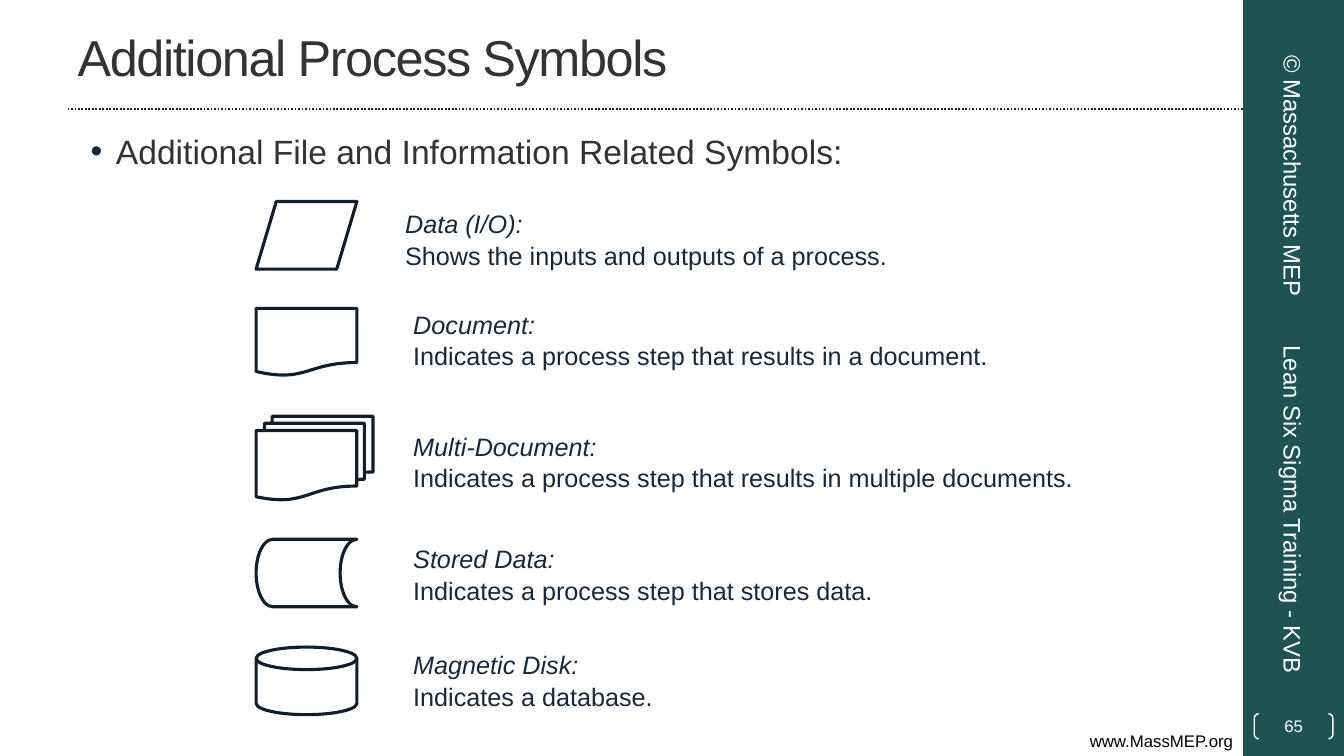
from lxml import etree
from pptx import Presentation
from pptx.dml.color import RGBColor
from pptx.enum.dml import MSO_LINE
from pptx.enum.shapes import MSO_CONNECTOR, MSO_SHAPE
from pptx.enum.text import MSO_ANCHOR, MSO_AUTO_SIZE, PP_ALIGN
from pptx.oxml.ns import qn
from pptx.util import Emu, Pt

PX = 9144  # EMU per px, at 100 px to the inch
LEFT, CENTER, RIGHT = PP_ALIGN.LEFT, PP_ALIGN.CENTER, PP_ALIGN.RIGHT
TOP, MIDDLE = MSO_ANCHOR.TOP, MSO_ANCHOR.MIDDLE
NO_FIT, GROW = MSO_AUTO_SIZE.NONE, MSO_AUTO_SIZE.SHAPE_TO_FIT_TEXT
STRAIGHT = MSO_CONNECTOR.STRAIGHT
DOTTED = MSO_LINE.ROUND_DOT

TEAL = RGBColor(0x1F, 0x52, 0x52)
NAVY = RGBColor(0x18, 0x28, 0x3B)
RULE_NAVY = RGBColor(0x17, 0x27, 0x3B)
OUTLINE = RGBColor(0x12, 0x1E, 0x2C)
CHARCOAL = RGBColor(0x33, 0x33, 0x33)
BLACK = RGBColor(0x00, 0x00, 0x00)
WHITE = RGBColor(0xFF, 0xFF, 0xFF)

SYMBOL_LEFT = 254
TEXT_RIGHT = 1092

# shape, top, width, height, text left, text top, name, meaning
SYMBOLS = [
    (MSO_SHAPE.FLOWCHART_DATA, 200, 100, 67, 392, 200,
     "Data (I/O):", "Shows the inputs and outputs of a process."),
    (MSO_SHAPE.FLOWCHART_DOCUMENT, 306, 100, 67, 400, 300,
     "Document:", "Indicates a process step that results in a document."),
    (MSO_SHAPE.FLOWCHART_MULTIDOCUMENT, 413, 116, 83, 400, 421,
     "Multi-Document:",
     "Indicates a process step that results in multiple documents."),
    (MSO_SHAPE.FLOWCHART_STORED_DATA, 535, 100, 67, 400, 533,
     "Stored Data:", "Indicates a process step that stores data."),
    (MSO_SHAPE.FLOWCHART_MAGNETIC_DISK, 642, 100, 67, 400, 638,
     "Magnetic Disk:", "Indicates a database."),
]


def px(*lengths):
    return [Emu(length * PX) for length in lengths]


class SlideBuilder:
    font = "Arial"

    def __init__(self, slide):
        self.slide = slide

    def run(self, paragraph, text, size, color, italic=False):
        run = paragraph.add_run()
        run.text = text
        run.font.name = self.font
        run.font.size = Pt(size)
        run.font.color.rgb = color
        run.font.italic = italic
        return run

    def placeholder(self, index, box, anchor):
        """Move a template placeholder and return its first paragraph."""
        shape = self.slide.placeholders[index]
        shape.left, shape.top, shape.width, shape.height = px(*box)
        frame = shape.text_frame
        frame.auto_size = NO_FIT
        frame.vertical_anchor = anchor
        paragraph = frame.paragraphs[0]
        paragraph.alignment = LEFT
        paragraph.space_before = Pt(0)
        return paragraph

    def title(self, text, box):
        paragraph = self.placeholder(0, box, MIDDLE)
        run = self.run(paragraph, text, 36, CHARCOAL)
        run.font._element.set("spc", "-100")

    def bullet(self, text, box):
        paragraph = self.placeholder(1, box, TOP)
        properties = paragraph._p.get_or_add_pPr()
        properties.set("marL", str(38 * PX))
        properties.set("indent", str(-25 * PX))
        color = etree.SubElement(properties, qn("a:buClr"))
        etree.SubElement(color, qn("a:srgbClr"), val=str(NAVY))
        etree.SubElement(properties, qn("a:buFont"), typeface=self.font)
        etree.SubElement(properties, qn("a:buChar"), char="•")
        self.run(paragraph, text, 24, CHARCOAL)

    def text(self, lines, box, size, color, align=LEFT, anchor=TOP,
             fit=NO_FIT, rotation=0, spacing=None):
        """Add a text box from (text, italic) lines, one paragraph each."""
        shape = self.slide.shapes.add_textbox(*px(*box))
        shape.rotation = rotation
        frame = shape.text_frame
        frame.word_wrap = True
        frame.auto_size = fit
        frame.vertical_anchor = anchor
        for number, (text, italic) in enumerate(lines):
            paragraph = frame.add_paragraph() if number else frame.paragraphs[0]
            paragraph.alignment = align
            paragraph.line_spacing = spacing
            self.run(paragraph, text, size, color, italic)

    def shape(self, kind, box, fill=None, line=None, weight=1):
        shape = self.slide.shapes.add_shape(kind, *px(*box))
        shape.shadow.inherit = False
        if fill is None:
            shape.fill.background()
        else:
            shape.fill.solid()
            shape.fill.fore_color.rgb = fill
        if line is None:
            shape.line.fill.background()
        else:
            shape.line.color.rgb = line
            shape.line.width = Pt(weight)
        return shape

    def dotted_rule(self, left, right, y):
        rule = self.slide.shapes.add_connector(STRAIGHT, *px(left, y, right, y))
        rule.line.color.rgb = RULE_NAVY
        rule.line.width = Pt(1.25)
        rule.line.dash_style = DOTTED
        etree.SubElement(rule._element.spPr, qn("a:effectLst"))

    def page_number(self, number, box):
        bracket = self.shape(MSO_SHAPE.DOUBLE_BRACKET, box, line=WHITE)
        bracket.adjustments[0] = 0.18
        frame = bracket.text_frame
        frame.margin_left = frame.margin_right = 0
        frame.margin_top = frame.margin_bottom = 0
        frame.vertical_anchor = MIDDLE
        paragraph = frame.paragraphs[0]
        paragraph.alignment = CENTER
        self.run(paragraph, number, 12, WHITE)


def main():
    presentation = Presentation()
    presentation.slide_width, presentation.slide_height = px(1333, 750)
    layout = presentation.slide_layouts[1]
    builder = SlideBuilder(presentation.slides.add_slide(layout))

    builder.shape(MSO_SHAPE.RECTANGLE, (1233, 0, 100, 750), fill=TEAL)
    builder.dotted_rule(67, 1233, 108)
    builder.text([("www.MassMEP.org", False)], (0, 720, 1233, 30), 12, BLACK,
                 align=RIGHT, fit=GROW)
    builder.title("Additional Process Symbols", (67, 3, 1111, 105))
    builder.bullet("Additional File and Information Related Symbols:",
                   (67, 125, 1111, 600))
    builder.page_number("65", (1244, 708, 78, 25))
    builder.text([("© Massachusetts MEP", False)], (1124, 148, 317, 53),
                 17, WHITE, align=CENTER, anchor=MIDDLE, rotation=90)
    builder.text([("Lean Six Sigma Training - KVB", False)],
                 (1099, 490, 367, 53), 17, WHITE, anchor=MIDDLE, rotation=90)

    for kind, top, width, height, text_left, text_top, name, meaning in SYMBOLS:
        builder.shape(kind, (SYMBOL_LEFT, top, width, height),
                      line=OUTLINE, weight=2.25)
        builder.text([(name, True), (meaning, False)],
                     (text_left, text_top, TEXT_RIGHT - text_left, 71),
                     18, NAVY, fit=GROW, spacing=1.05)

    presentation.save("out.pptx")


if __name__ == "__main__":
    main()
